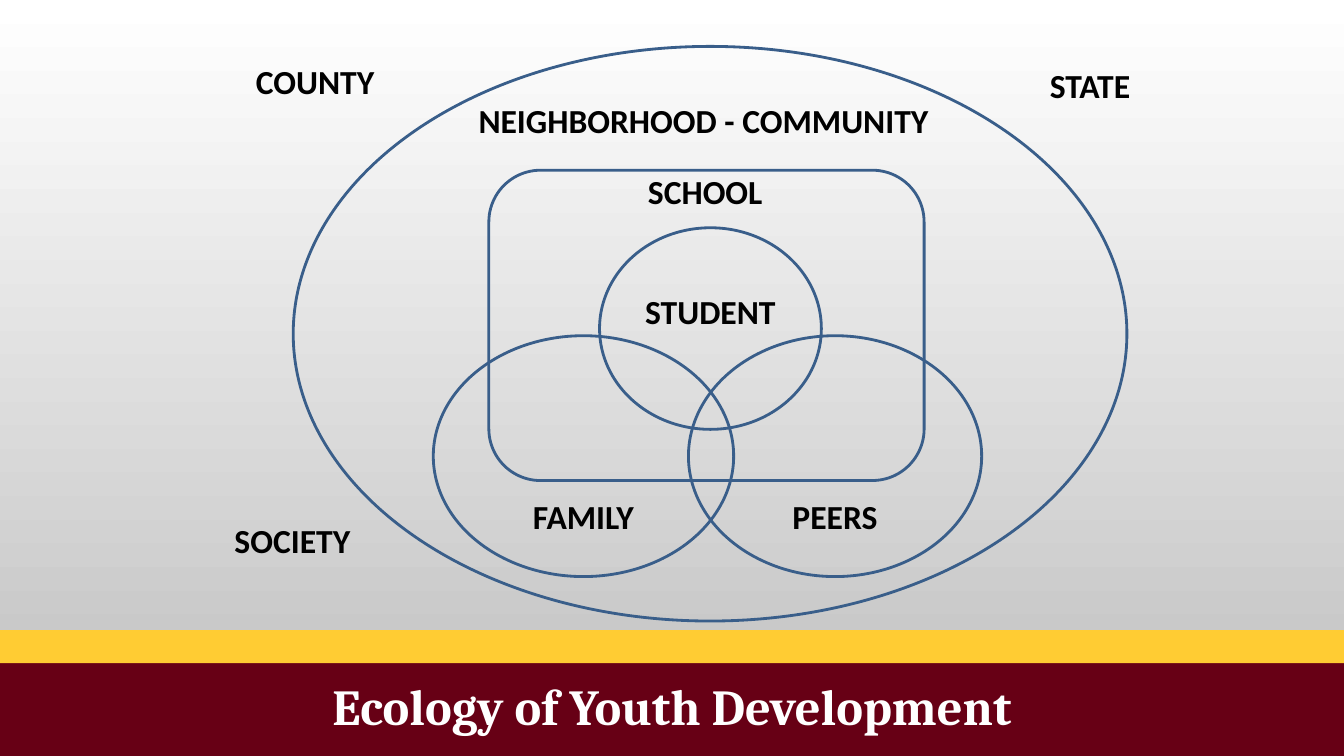
from pptx import Presentation
from pptx.dml.color import RGBColor
from pptx.enum.shapes import MSO_SHAPE
from pptx.enum.text import MSO_ANCHOR, PP_ALIGN
from pptx.util import Cm, Pt

RECTANGLE = MSO_SHAPE.RECTANGLE
ROUNDED = MSO_SHAPE.ROUNDED_RECTANGLE
OVAL = MSO_SHAPE.OVAL
TOP, MIDDLE, BOTTOM = MSO_ANCHOR.TOP, MSO_ANCHOR.MIDDLE, MSO_ANCHOR.BOTTOM
LEFT, CENTER = PP_ALIGN.LEFT, PP_ALIGN.CENTER

WIDTH, HEIGHT = 33.87, 19.05
GOLD_TOP, MAROON_TOP = 15.88, 16.71
COLORS = {
    "maroon": "670015",
    "gold": "FFCC33",
    "outline": "395E8A",
    "label": "000000",
    "title": "FFFFFF",
    "sky": "FFFFFF",
    "ground": "BFBFBF",
}


def color(key):
    """Return the palette colour for a key."""
    return RGBColor.from_string(COLORS[key])


def write(frame, text, size, font_name, color_key, align, anchor):
    """Put one bold formatted line into a text frame."""
    frame.word_wrap = True
    frame.vertical_anchor = anchor
    frame.text = text
    line = frame.paragraphs[0]
    line.alignment = align
    font = line.runs[0].font
    font.size, font.name, font.bold = Pt(size), font_name, True
    font.color.rgb = color(color_key)


def paint_background(slide):
    """Fill the slide with a top-to-bottom gradient."""
    fill = slide.background.fill
    fill.gradient()
    fill.gradient_angle = 270
    for stop, key, position in zip(fill.gradient_stops, ("sky", "ground"), (0, 1)):
        stop.color.rgb = color(key)
        stop.position = position


def add_band(slide, top, bottom, color_key):
    """Add a full-width band between two heights."""
    band = slide.shapes.add_shape(RECTANGLE, 0, Cm(top), Cm(WIDTH), Cm(bottom - top))
    band.shadow.inherit = False
    band.fill.solid()
    band.fill.fore_color.rgb = color(color_key)
    band.line.fill.background()


def place_title(slide, text):
    """Set the title on the maroon band, in front of it."""
    title = slide.shapes.title
    slide.shapes._spTree.append(title._element)
    title.left, title.top = 0, Cm(MAROON_TOP)
    title.width, title.height = Cm(WIDTH), Cm(HEIGHT - MAROON_TOP)
    write(title.text_frame, text, 36, "Cambria", "title", CENTER, MIDDLE)
    title.text_frame.paragraphs[0].line_spacing = 0.9


def add_sphere(slide, kind, box, text="", anchor=MIDDLE, bottom_inset=0.13):
    """Add an outlined sphere of influence, with its name if given."""
    sphere = slide.shapes.add_shape(kind, *map(Cm, box))
    sphere.shadow.inherit = False
    sphere.fill.background()
    sphere.line.color.rgb = color("outline")
    sphere.line.width = Pt(2)
    if text:
        write(sphere.text_frame, text, 24, "Calibri", "label", CENTER, anchor)
        sphere.text_frame.margin_bottom = Cm(bottom_inset)


def add_label(slide, text, box, anchor=TOP):
    """Add a free-standing label."""
    label = slide.shapes.add_textbox(*map(Cm, box))
    write(label.text_frame, text, 24, "Calibri", "label", LEFT, anchor)


def main():
    """Build and save the slide."""
    deck = Presentation()
    deck.slide_width, deck.slide_height = Cm(WIDTH), Cm(HEIGHT)
    slide = deck.slides.add_slide(deck.slide_layouts[5])
    paint_background(slide)
    add_band(slide, MAROON_TOP, HEIGHT, "maroon")
    add_band(slide, GOLD_TOP, MAROON_TOP, "gold")
    place_title(slide, "Ecology of Youth Development")

    add_sphere(slide, ROUNDED, (12.32, 4.29, 10.97, 7.82))
    add_sphere(slide, OVAL, (7.39, 1.17, 21.01, 14.48))
    add_sphere(slide, OVAL, (17.35, 8.46, 7.39, 6.07), "PEERS", BOTTOM)
    add_sphere(slide, OVAL, (10.92, 8.46, 7.57, 6.07), "FAMILY", BOTTOM)
    add_sphere(slide, OVAL, (15.11, 5.74, 5.59, 5.08), "STUDENT", MIDDLE, 1)

    add_label(slide, "SCHOOL", (16.08, 4.19, 3.48, 1.57))
    add_label(slide, "NEIGHBORHOOD - COMMUNITY", (11.81, 2.13, 12.04, 1.8), MIDDLE)
    for text, left, top in (
        ("COUNTY", 6.2, 1.4),
        ("SOCIETY", 5.66, 12.98),
        ("STATE", 26.21, 1.5),
    ):
        add_label(slide, text, (left, top, 4.09, 1.55))
    deck.save("out.pptx")


if __name__ == "__main__":
    main()
